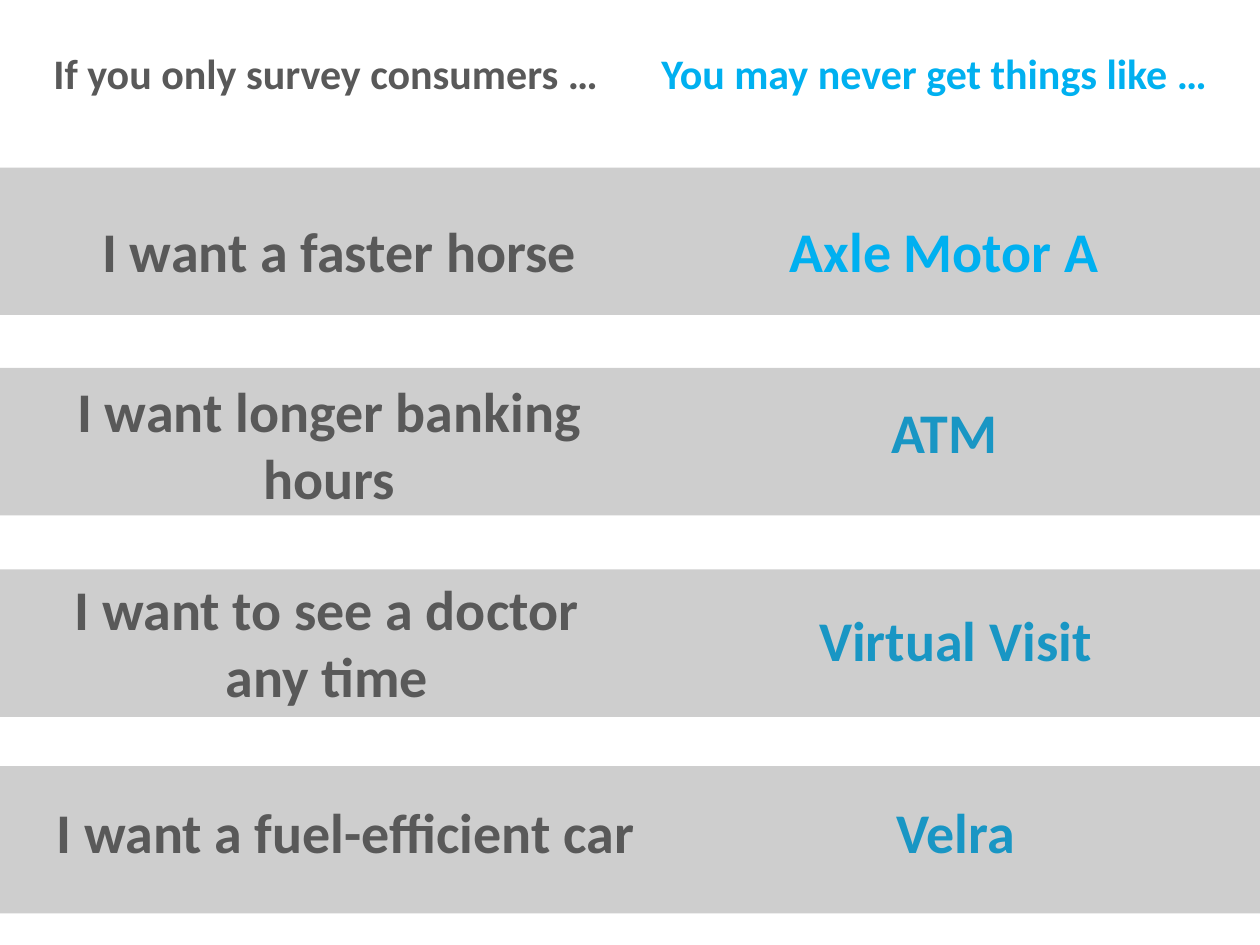
from pptx import Presentation
from pptx.dml.color import RGBColor
from pptx.enum.shapes import MSO_SHAPE
from pptx.enum.text import MSO_AUTO_SIZE, PP_ALIGN
from pptx.oxml.ns import qn
from pptx.util import Inches, Pt
from lxml import etree

RECTANGLE = MSO_SHAPE.RECTANGLE
FIT_SHAPE = MSO_AUTO_SIZE.SHAPE_TO_FIT_TEXT
CENTER = PP_ALIGN.CENTER

THEME = {
    "font": "Calibri",
    "request": RGBColor(0x59, 0x59, 0x59),
    "invention": RGBColor(0x00, 0xB0, 0xF0),
    "band": RGBColor(0x59, 0x59, 0x59),
    "band_opacity": 29,
    "heading_size": 24,
    "body_size": 32,
}

PAGE_WIDTH, PAGE_HEIGHT = 10, 7.5
COLUMN_WIDTH = 4.83
BAND_HEIGHT = 1.17
LINE_HEIGHTS = {"heading_size": 0.5, "body_size": 0.64}
TWO_LINE_HEIGHT = 1.18

HEADINGS = [
    ("If you only survey consumers …", "request", 0.17),
    ("You may never get things like …", "invention", 5),
]

ROWS = [
    {"band_top": 1.33, "band_in_front": False,
     "request": ("I want a faster horse", 0.28, 1.67, 1),
     "invention": ("Axle Motor A", 5.08, 1.67, 1)},
    {"band_top": 2.92, "band_in_front": True,
     "request": ("I want longer banking hours", 0.2, 2.94, 2),
     "invention": ("ATM", 5.08, 3.11, 1)},
    {"band_top": 4.52, "band_in_front": True,
     "request": ("I want to see a doctor any time", 0.18, 4.51, 2),
     "invention": ("Virtual Visit", 5.17, 4.76, 1)},
    {"band_top": 6.08, "band_in_front": True,
     "request": ("I want a fuel-efficient car", 0.33, 6.28, 1),
     "invention": ("Velra", 5.17, 6.28, 1)},
]


def add_band(page, top):
    band = page.shapes.add_shape(
        RECTANGLE, 0, Inches(top), Inches(PAGE_WIDTH), Inches(BAND_HEIGHT))
    band.shadow.inherit = False
    band.line.fill.background()
    band.fill.solid()
    band.fill.fore_color.rgb = THEME["band"]
    color = band.fill._xPr.find(qn("a:solidFill"))[0]
    etree.SubElement(color, qn("a:alpha"), val=str(THEME["band_opacity"] * 1000))


def add_label(page, text, role, size, left, top, lines=1):
    height = LINE_HEIGHTS[size] if lines == 1 else TWO_LINE_HEIGHT
    box = page.shapes.add_textbox(
        Inches(left), Inches(top), Inches(COLUMN_WIDTH), Inches(height))
    frame = box.text_frame
    frame.word_wrap = True
    frame.auto_size = FIT_SHAPE
    frame.text = text
    para = frame.paragraphs[0]
    para.alignment = CENTER
    font = para.runs[0].font
    font.name = THEME["font"]
    font.size = Pt(THEME[size])
    font.bold = True
    font.color.rgb = THEME[role]


def main():
    deck = Presentation()
    deck.slide_width = Inches(PAGE_WIDTH)
    deck.slide_height = Inches(PAGE_HEIGHT)
    page = deck.slides.add_slide(deck.slide_layouts[6])

    for text, role, left in HEADINGS:
        add_label(page, text, role, "heading_size", left, 0.33)
    for row in ROWS:
        if not row["band_in_front"]:
            add_band(page, row["band_top"])
        for role in ("request", "invention"):
            text, left, top, lines = row[role]
            add_label(page, text, role, "body_size", left, top, lines)
        if row["band_in_front"]:
            add_band(page, row["band_top"])

    deck.save("out.pptx")


if __name__ == "__main__":
    main()
